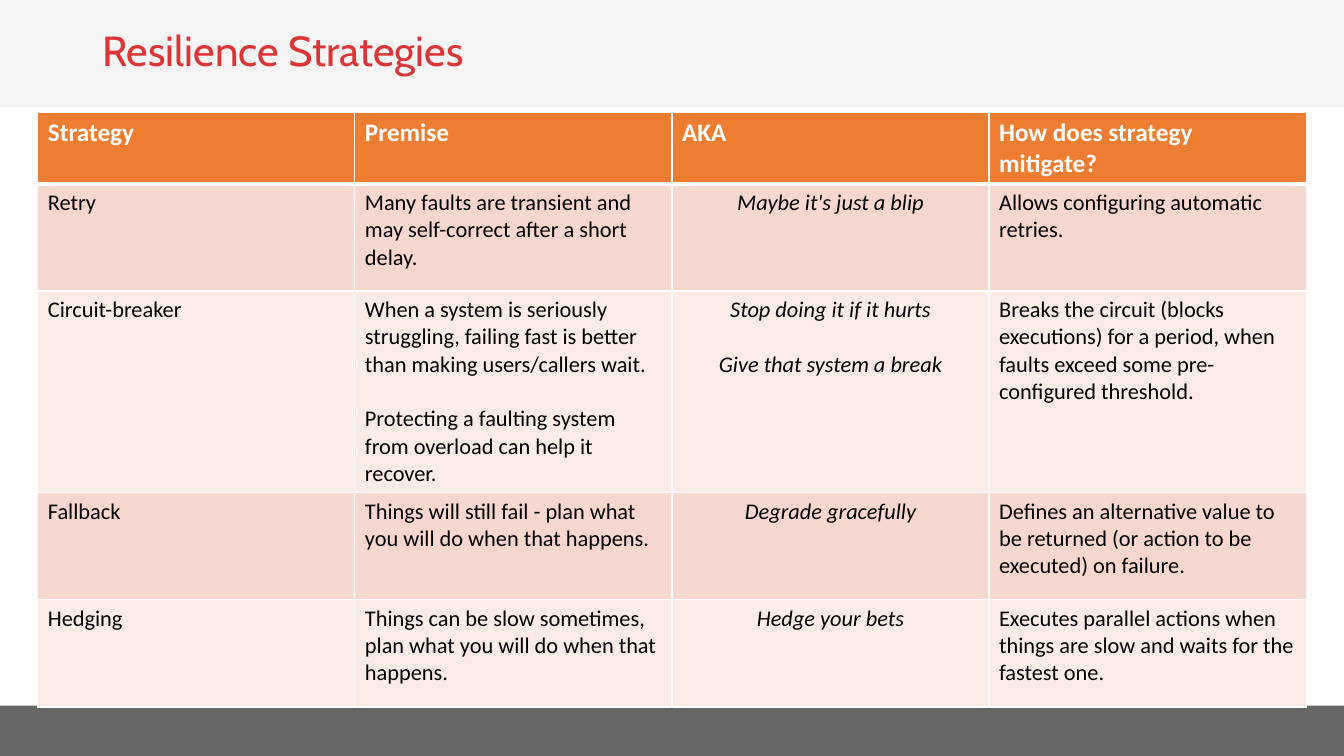
from dataclasses import dataclass
from typing import Any

from lxml import etree
from pptx import Presentation
from pptx import util as u
from pptx.dml import color
from pptx.enum import shapes, text
from pptx.oxml import ns

SCALE = 9525
HUES = {
    "white": "FFFFFF",
    "black": "000000",
    "red": "DB3635",
    "orange": "ED7D31",
    "rose": "F8D7CE",
    "blush": "FCECE8",
    "pale": "F5F5F5",
    "gray": "666666",
}
LEFT = text.PP_ALIGN.LEFT
CENTER = text.PP_ALIGN.CENTER
AKA = 2
COL = 302


@dataclass
class Band:
    top: int
    height: int
    hue: str


@dataclass
class Row:
    height: int
    cells: list[str]


BANDS = [Band(672, 48, "gray"), Band(0, 102, "pale")]
ROWS = [
    Row(68, ["Strategy", "Premise", "AKA", "How does strategy mitigate?"]),
    Row(102, [
        "Retry",
        "Many faults are transient and may self-correct after a short delay.",
        "Maybe it's just a blip",
        "Allows configuring automatic retries.",
    ]),
    Row(192, [
        "Circuit-breaker",
        "When a system is seriously struggling, failing fast is better than making users/callers wait.\n"
        "Protecting a faulting system from overload can help it recover.",
        "Stop doing it if it hurts\nGive that system a break",
        "Breaks the circuit (blocks executions) for a period, when faults exceed some pre-configured threshold.",
    ]),
    Row(102, [
        "Fallback",
        "Things will still fail - plan what you will do when that happens.",
        "Degrade gracefully",
        "Defines an alternative value to be returned (or action to be executed) on failure.",
    ]),
    Row(102, [
        "Hedging",
        "Things can be slow sometimes, plan what you will do when that happens.",
        "Hedge your bets",
        "Executes parallel actions when things are slow and waits for the fastest one.",
    ]),
]


def px(size: int) -> u.Emu:
    return u.Emu(size * SCALE)


def rgb(hue: str) -> color.RGBColor:
    return color.RGBColor.from_string(HUES[hue])


def apply(item: Any, values: dict[str, Any]) -> None:
    for name, value in values.items():
        setattr(item, name, value)


def paint(item: Any, hue: str) -> None:
    item.fill.solid()
    item.fill.fore_color.rgb = rgb(hue)


def style(part: Any, hue: str, values: dict[str, Any]) -> None:
    apply(part.font, values)
    part.font.color.rgb = rgb(hue)


def draw_band(slide: Any, band: Band) -> None:
    shape = slide.shapes.add_shape(
        shapes.MSO_SHAPE.RECTANGLE, 0, px(band.top), px(1280), px(band.height))
    shape.shadow.inherit = False
    paint(shape, band.hue)
    shape.line.fill.background()
    slide.shapes.title.element.addprevious(shape.element)


def draw_title(slide: Any) -> None:
    title = slide.shapes.title
    apply(title, {"left": px(88), "top": px(4), "width": px(1016), "height": px(93)})
    frame = title.text_frame
    frame.text = "Resilience Strategies"
    apply(frame, {"vertical_anchor": text.MSO_ANCHOR.MIDDLE, "word_wrap": True})
    part = frame.paragraphs[0]
    apply(part, {"alignment": LEFT, "line_spacing": 0.9})
    style(part.runs[0], "red", {"name": "Cabin", "size": u.Pt(30), "bold": False})


def edge(cell: Any, row: int) -> None:
    thick = {"lnT": row == 1, "lnB": row == 0}
    props = cell._tc.get_or_add_tcPr()
    for side in ("lnL", "lnR", "lnT", "lnB"):
        width = u.Pt(3 if thick.get(side) else 1)
        line = etree.SubElement(props, ns.qn(f"a:{side}"), w=str(width))
        fill = etree.SubElement(line, ns.qn("a:solidFill"))
        etree.SubElement(fill, ns.qn("a:srgbClr"), val=HUES["white"])


def fill_cell(cell: Any, row: int, col: int, words: str) -> None:
    head = row == 0
    aka = col == AKA and not head
    edge(cell, row)
    paint(cell, "orange" if head else "rose" if row % 2 else "blush")
    cell.text = words
    values = {
        "name": "Calibri",
        "size": u.Pt(18 if head else 16),
        "bold": head,
        "italic": aka,
    }
    for index, part in enumerate(cell.text_frame.paragraphs):
        part.alignment = CENTER if aka else LEFT
        if index:
            part.space_before = u.Pt(19.5)
        style(part.runs[0], "white" if head else "black", values)


def draw_table(slide: Any, rows: list[Row]) -> None:
    count = len(rows[0].cells)
    height = sum(row.height for row in rows)
    table = slide.shapes.add_table(
        len(rows), count, px(36), px(107), px(COL * count), px(height)).table
    for column in table.columns:
        column.width = px(COL)
    for r, row in enumerate(rows):
        table.rows[r].height = px(row.height)
        for c, words in enumerate(row.cells):
            fill_cell(table.cell(r, c), r, c, words)


def main() -> None:
    deck = Presentation()
    apply(deck, {"slide_width": px(1280), "slide_height": px(720)})
    slide = deck.slides.add_slide(deck.slide_layouts.get_by_name("Title Only"))
    for band in BANDS:
        draw_band(slide, band)
    draw_title(slide)
    draw_table(slide, ROWS)
    deck.save("out.pptx")


if __name__ == "__main__":
    main()
